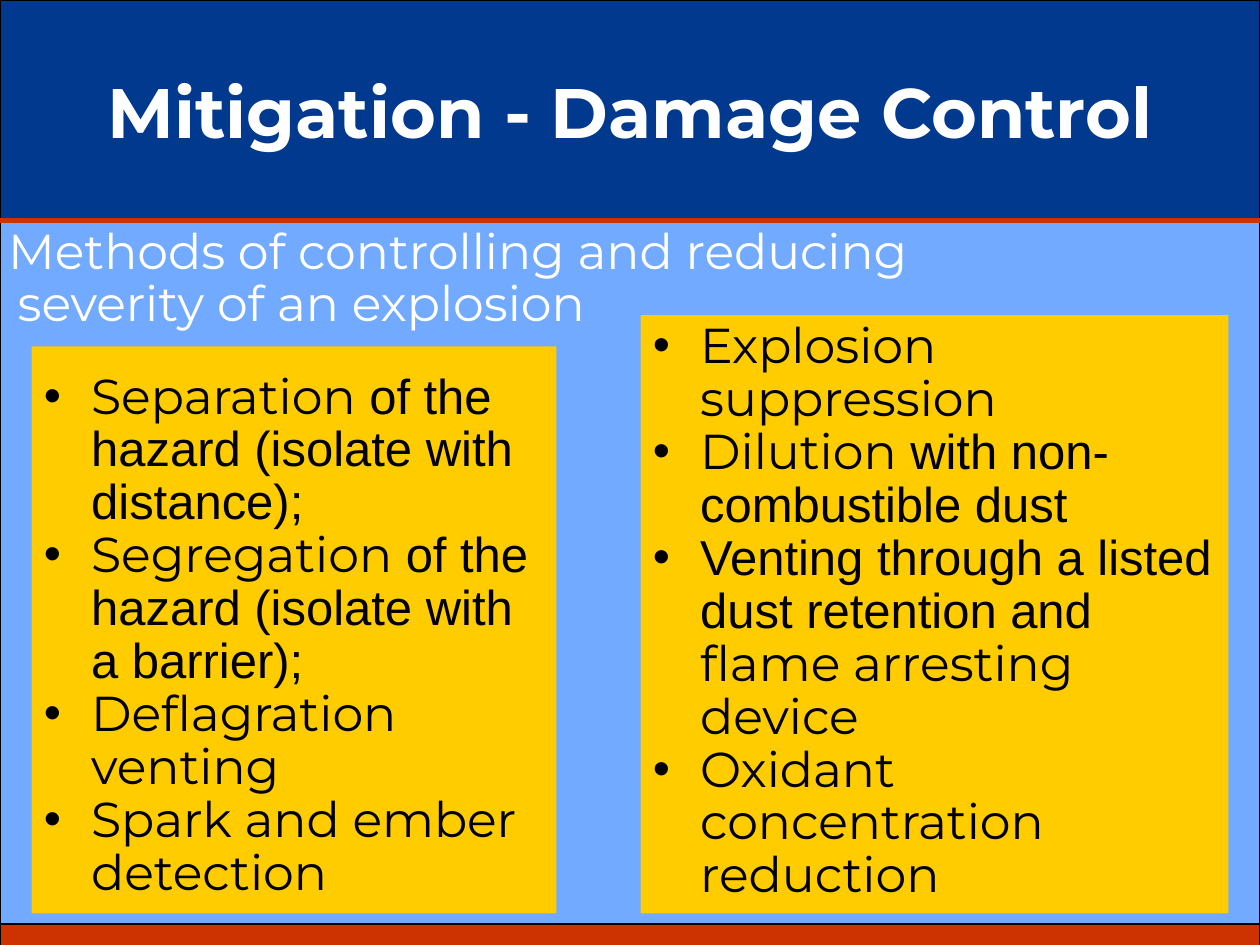
from dataclasses import dataclass

from lxml.etree import SubElement
from pptx import Presentation
from pptx.dml.color import RGBColor
from pptx.enum.shapes import MSO_CONNECTOR, MSO_SHAPE
from pptx.enum.text import MSO_ANCHOR, PP_ALIGN
from pptx.oxml.ns import qn
from pptx.shapes.autoshape import Shape
from pptx.slide import Slide
from pptx.text.text import _Paragraph as Paragraph
from pptx.util import Pt

BACKGROUND = RGBColor(0xD1, 0xD1, 0xF0)
LIGHT_BLUE = RGBColor(0x71, 0xAA, 0xFF)
NAVY = RGBColor(0x00, 0x39, 0x8E)
RED = RGBColor(0xCC, 0x33, 0x00)
YELLOW = RGBColor(0xFF, 0xCC, 0x00)
BLACK = RGBColor(0x00, 0x00, 0x00)
WHITE = RGBColor(0xFF, 0xFF, 0xFF)

HEADING_FONT = "Montserrat"
BODY_FONT = "Arial"
SLIDE_WIDTH = 720
SLIDE_HEIGHT = 540
HEADER_HEIGHT = 126
FOOTER_TOP = 528
BODY_SIZE = 28
BULLET_INDENT = 27


@dataclass(frozen=True)
class Box:
    left: float
    top: float
    width: float
    height: float

    def lengths(self) -> tuple[Pt, Pt, Pt, Pt]:
        return Pt(self.left), Pt(self.top), Pt(self.width), Pt(self.height)


@dataclass(frozen=True)
class Band:
    box: Box
    color: RGBColor


@dataclass(frozen=True)
class TextPart:
    text: str
    font: str = HEADING_FONT


@dataclass(frozen=True)
class Panel:
    box: Box
    top_inset: float
    bullets: list[list[TextPart]]


BANDS = [
    Band(Box(0, HEADER_HEIGHT, SLIDE_WIDTH, FOOTER_TOP - HEADER_HEIGHT), LIGHT_BLUE),
    Band(Box(0, 0, SLIDE_WIDTH, HEADER_HEIGHT), NAVY),
    Band(Box(0, FOOTER_TOP, SLIDE_WIDTH, 18), RED),
]

PANELS = [
    Panel(Box(18, 198, 300, 324), 14.4, [
        [TextPart("Separation"),
         TextPart(" of the hazard (isolate with distance);", BODY_FONT)],
        [TextPart("Segregation"),
         TextPart(" of the hazard (isolate with a barrier);", BODY_FONT)],
        [TextPart("Deflagration venting")],
        [TextPart("Spark and ember detection")],
    ]),
    Panel(Box(366, 180, 336, 342), 3.6, [
        [TextPart("Explosion suppression")],
        [TextPart("Dilution"), TextPart(" with non-combustible dust", BODY_FONT)],
        [TextPart("Venting through a listed dust retention and ", BODY_FONT),
         TextPart("flame arresting device")],
        [TextPart("Oxidant concentration reduction")],
    ]),
]


def add_rectangle(slide: Slide, box: Box, color: RGBColor) -> Shape:
    shape = slide.shapes.add_shape(MSO_SHAPE.RECTANGLE, *box.lengths())
    shape.shadow.inherit = False
    shape.fill.solid()
    shape.fill.fore_color.rgb = color
    return shape


def add_band(slide: Slide, band: Band) -> None:
    shape = add_rectangle(slide, band.box, band.color)
    shape.line.color.rgb = BLACK
    shape.line.width = Pt(0.75)


def add_header_rule(slide: Slide) -> None:
    rule = slide.shapes.add_connector(
        MSO_CONNECTOR.STRAIGHT,
        Pt(0), Pt(HEADER_HEIGHT), Pt(SLIDE_WIDTH), Pt(HEADER_HEIGHT))
    rule.line.color.rgb = RED
    rule.line.width = Pt(3)
    SubElement(rule._element.spPr, qn("a:effectLst"))


def add_run(paragraph: Paragraph, part: TextPart, color: RGBColor,
            size: float = BODY_SIZE, bold: bool = False) -> None:
    run = paragraph.add_run()
    run.text = part.text
    run.font.name = part.font
    run.font.size = Pt(size)
    run.font.bold = bold
    run.font.color.rgb = color


def set_indent(paragraph: Paragraph, left: float, first_line: float) -> None:
    properties = paragraph._p.get_or_add_pPr()
    properties.set("marL", str(Pt(left)))
    properties.set("indent", str(Pt(first_line)))


def add_bullet(paragraph: Paragraph) -> None:
    set_indent(paragraph, BULLET_INDENT, -BULLET_INDENT)
    properties = paragraph._p.get_or_add_pPr()
    SubElement(properties, qn("a:buFont"), typeface=BODY_FONT)
    SubElement(properties, qn("a:buChar"), char="•")


def add_text_box(slide: Slide, box: Box, anchor: MSO_ANCHOR) -> Paragraph:
    """Add a wrapping text box and return its first paragraph."""
    frame = slide.shapes.add_textbox(*box.lengths()).text_frame
    frame.word_wrap = True
    frame.vertical_anchor = anchor
    return frame.paragraphs[0]


def add_panel(slide: Slide, panel: Panel) -> None:
    shape = add_rectangle(slide, panel.box, YELLOW)
    shape.line.fill.background()
    frame = shape.text_frame
    frame.word_wrap = True
    frame.vertical_anchor = MSO_ANCHOR.TOP
    frame.margin_top = Pt(panel.top_inset)
    for index, parts in enumerate(panel.bullets):
        paragraph = frame.add_paragraph() if index else frame.paragraphs[0]
        add_bullet(paragraph)
        paragraph.alignment = PP_ALIGN.LEFT
        paragraph.line_spacing = 0.9
        for part in parts:
            add_run(paragraph, part, BLACK)


def main() -> None:
    presentation = Presentation()
    presentation.slide_width = Pt(SLIDE_WIDTH)
    presentation.slide_height = Pt(SLIDE_HEIGHT)
    slide = presentation.slides.add_slide(presentation.slide_layouts[6])
    slide.background.fill.solid()
    slide.background.fill.fore_color.rgb = BACKGROUND

    for band in BANDS:
        add_band(slide, band)
    add_header_rule(slide)

    title = add_text_box(slide, Box(36, 18, 648, 90), MSO_ANCHOR.MIDDLE)
    title.alignment = PP_ALIGN.CENTER
    add_run(title, TextPart("Mitigation - Damage Control"), WHITE, 40, True)

    for panel in PANELS:
        add_panel(slide, panel)

    introduction = add_text_box(slide, Box(-24, 126, 606, 78), MSO_ANCHOR.TOP)
    set_indent(introduction, BULLET_INDENT, -5.4)
    introduction.line_spacing = 0.9
    add_run(introduction, TextPart(
        "Methods of controlling and reducing severity of an explosion"), WHITE)

    presentation.save("out.pptx")


if __name__ == "__main__":
    main()
